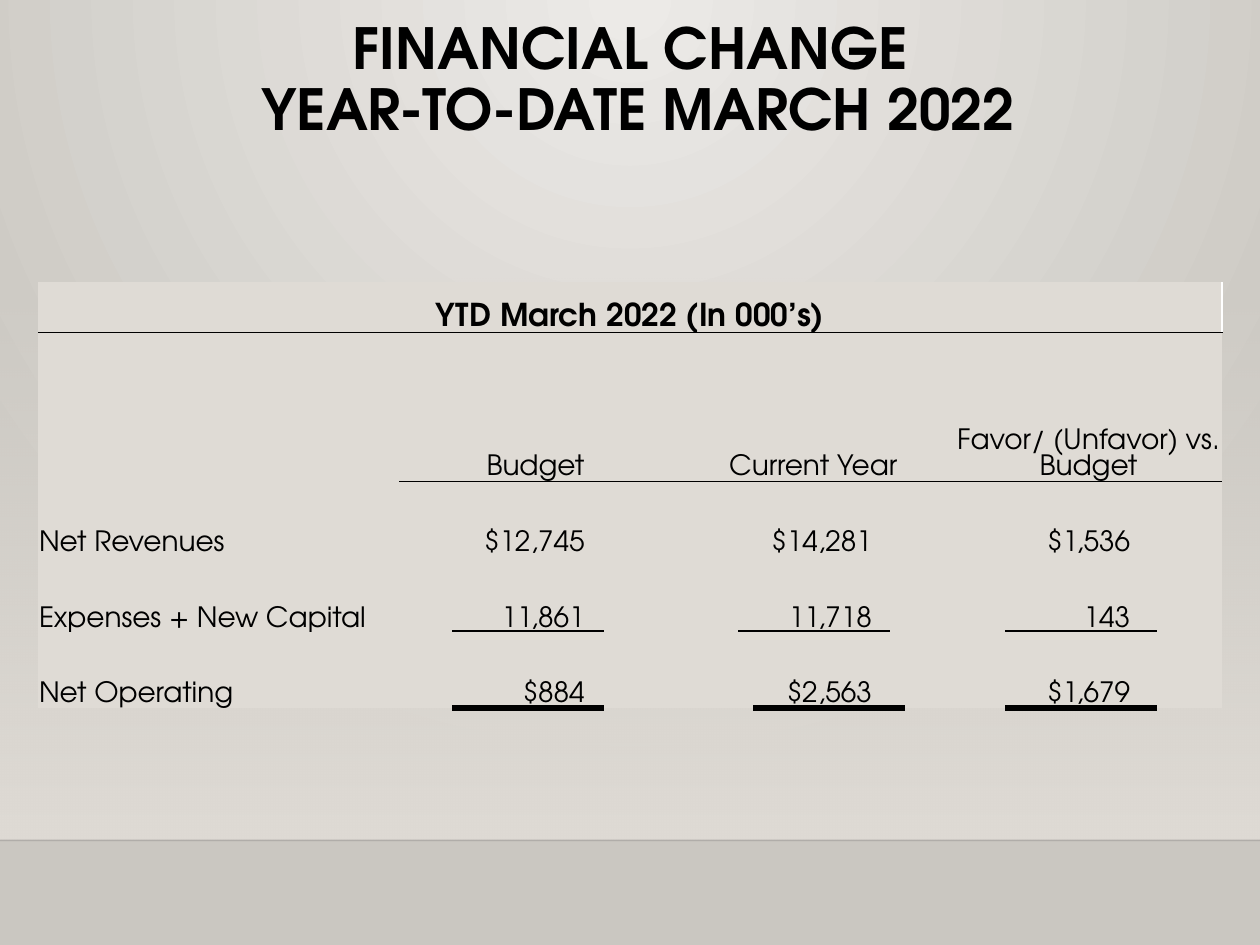
from lxml.etree import SubElement
from pptx import Presentation
from pptx.dml.color import RGBColor
from pptx.enum.shapes import MSO_CONNECTOR, MSO_SHAPE
from pptx.enum.text import MSO_ANCHOR, PP_ALIGN
from pptx.oxml import parse_xml
from pptx.oxml.ns import nsdecls, qn
from pptx.util import Inches, Pt

W, H = 10, 7.5
FONT, INK, PANEL, WHITE = "TeX Gyre Adventor", "000000", "DFDBD5", "FFFFFF"
BACKDROP = ["ECEAE7", "CAC7C1"]
NO_STYLE = "{2D5ABB26-0587-4C30-8999-92F81FD0307C}"

TITLE = "FINANCIAL CHANGE\v YEAR-TO-DATE MARCH 2022"
CAPTION = "YTD March 2022 (In 000’s)"
HEADINGS = ["Budget", "Current Year", "Favor/ (Unfavor) vs. Budget"]
RESULTS = [
    ("Net Revenues", "$12,745", "$14,281", "$1,536"),
    ("Expenses + New Capital", "11,861", "11,718", "143"),
    ("Net Operating", "$884", "$2,563", "$1,679"),
]
COLS = [2.87, 2.16, 2.25, 2.12]
ROWS = [0.4, 0.5, 0.34, 0.34, 0.6, 0.6, 0.6]
LEFT, TOP = 0.3, 2.24
FIGURE_INSET = [0.69, 0.66, 0.73]
RULE = 1.2
RULES = [(5.01, 1.25, [3.59, 5.86, 7.98]), (5.62, 3, [3.59, 5.98, 7.98])]
FLOOR = 6.67


def rgb(value):
    return RGBColor.from_string(value)


def gradient(fill, colors):
    fill.gradient()
    for stop, color in zip(fill.gradient_stops, colors):
        stop.color.rgb = rgb(color)


def set_alpha(element, percent):
    SubElement(element, qn("a:alpha"), val=str(percent * 1000))


def style(p, size, bold=False, align=PP_ALIGN.CENTER):
    p.alignment = align
    for r in p.runs:
        for key, value in dict(name=FONT, size=Pt(size), bold=bold).items():
            setattr(r.font, key, value)
        r.font.color.rgb = rgb(INK)


def add_line(s, x, y, length, width, color=INK):
    line = s.shapes.add_connector(MSO_CONNECTOR.STRAIGHT, Inches(x), Inches(y), Inches(x + length), Inches(y))
    line.line.color.rgb, line.line.width = rgb(color), Pt(width)
    SubElement(line._element.spPr, qn("a:effectLst"))
    return line


def set_borders(cell, **sides):
    tc_pr = cell._tc.get_or_add_tcPr()
    for i, side in enumerate(k for k in "LRTB" if k in sides):
        tc_pr.insert(i, parse_xml(
            f'<a:ln{side} {nsdecls("a")} w="12700"><a:solidFill>'
            f'<a:srgbClr val="{sides[side]}"/></a:solidFill></a:ln{side}>'))


def write(cell, text, size=16, **fmt):
    cell.text = text
    style(cell.text_frame.paragraphs[0], size, **fmt)


def add_backdrop(s):
    fill = s.background.fill
    gradient(fill, BACKDROP)
    grad = s._element.find(".//" + qn("a:gradFill"))
    grad.remove(grad.find(qn("a:lin")))
    circle = SubElement(grad, qn("a:path"), path="circle")
    SubElement(circle, qn("a:fillToRect"), l="43000", t="0", r="43000", b="100000")

    wall = s.shapes.add_shape(MSO_SHAPE.RECTANGLE, 0, Inches(2.2), Inches(W), Inches(FLOOR - 2.2))
    wall.shadow.inherit = False
    wall.line.fill.background()
    gradient(wall.fill, [PANEL, PANEL])
    wall.fill.gradient_angle = 270
    set_alpha(wall._element.spPr.find(".//" + qn("a:srgbClr")), 0)
    edge = add_line(s, 0, FLOOR, W, 1, "000001")
    set_alpha(edge._element.spPr.find(".//" + qn("a:srgbClr")), 20)


def add_title(s):
    title = s.shapes.title
    box = dict(left=0.9, top=0.11, width=8.2, height=1.13)
    for key, value in box.items():
        setattr(title, key, Inches(value))
    tf = title.text_frame
    tf.text, tf.vertical_anchor, tf.word_wrap = TITLE, MSO_ANCHOR.TOP, True
    tf.paragraphs[0].line_spacing = 0.9
    style(tf.paragraphs[0], 32.4, bold=True)


def add_results(s):
    frame = s.shapes.add_table(len(ROWS), len(COLS), Inches(LEFT), Inches(TOP),
                               Inches(sum(COLS)), Inches(sum(ROWS)))
    table = frame.table
    table.first_row = table.horz_banding = False
    table._tbl.tblPr.find(qn("a:tableStyleId")).text = NO_STYLE
    for col, width in zip(table.columns, COLS):
        col.width = Inches(width)
    for row, height in zip(table.rows, ROWS):
        row.height = Inches(height)
    margins = dict(margin_left=0.01, margin_right=0.01, margin_top=0.01, margin_bottom=0)
    for cell in table.iter_cells():
        cell.fill.solid()
        cell.fill.fore_color.rgb = rgb(PANEL)
        cell.vertical_anchor = MSO_ANCHOR.BOTTOM
        for key, value in margins.items():
            setattr(cell, key, Inches(value))

    caption = table.cell(0, 0)
    caption.merge(table.cell(0, len(COLS) - 1))
    write(caption, CAPTION, 18, bold=True)
    set_borders(caption, R=WHITE, B=INK)
    for c, heading in enumerate(HEADINGS, 1):
        cell = table.cell(1, c)
        cell.merge(table.cell(3, c))
        write(cell, heading)
        set_borders(cell, B=INK)
    for r, (label, *figures) in enumerate(RESULTS, 4):
        write(table.cell(r, 0), label, align=PP_ALIGN.LEFT)
        for c, (figure, inset) in enumerate(zip(figures, FIGURE_INSET), 1):
            cell = table.cell(r, c)
            write(cell, figure, align=PP_ALIGN.RIGHT)
            cell.margin_right = Inches(inset)


def main():
    """Build the year-to-date financial change slide."""
    prs = Presentation()
    prs.slide_width, prs.slide_height = Inches(W), Inches(H)
    s = prs.slides.add_slide(prs.slide_layouts[5])
    add_backdrop(s)
    add_title(s)
    add_results(s)
    for y, width, starts in RULES:
        for x in starts:
            add_line(s, x, y, RULE, width)
    prs.save("out.pptx")


if __name__ == "__main__":
    main()
